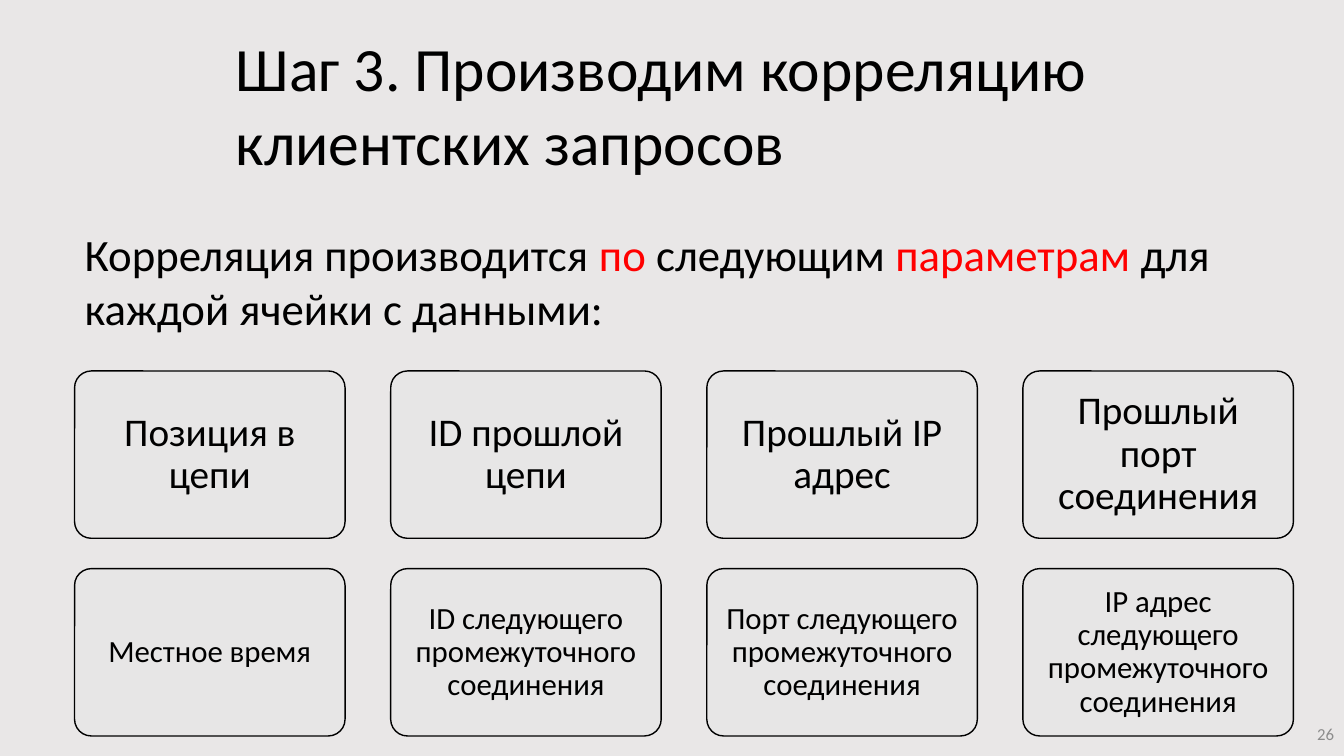
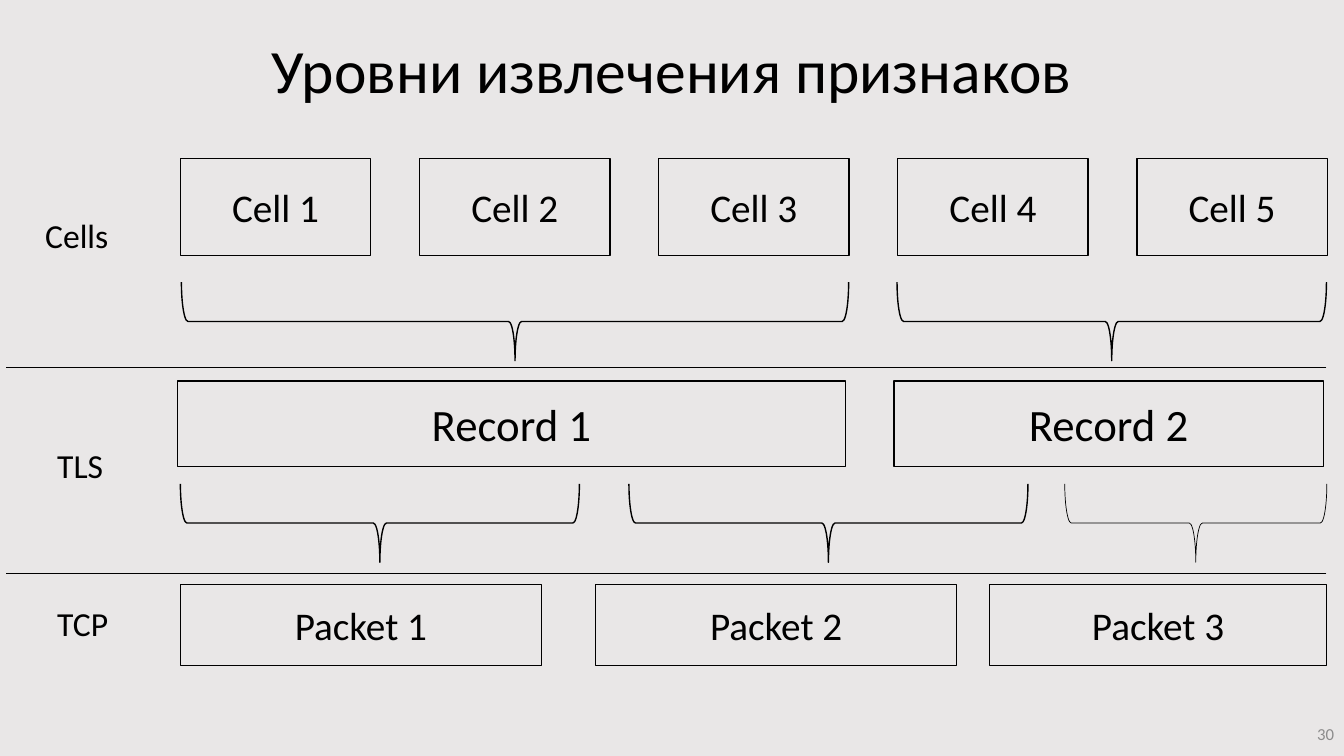
from pptx import Presentation
from pptx import util as u
from pptx.dml import color
from pptx.enum import shapes, text
from pptx.oxml import xmlchemy

Pt = u.Pt
Kind = shapes.MSO_SHAPE
Align = text.PP_ALIGN
Anchor = text.MSO_ANCHOR


def rgb(value):
    return color.RGBColor.from_string(value)


def write(shape, content, size=28, ink="000000", align=Align.LEFT,
          anchor=Anchor.TOP, spacing=1.0, inset=None):
    """Fill a shape with a string, or with (text, colour) pairs."""
    frame = shape.text_frame
    frame.word_wrap = True
    frame.vertical_anchor = anchor
    if inset is not None:
        frame.margin_left = frame.margin_right = Pt(inset)
        frame.margin_top = frame.margin_bottom = Pt(inset)
    paragraph = frame.paragraphs[0]
    paragraph.alignment = align
    paragraph.line_spacing = spacing
    for part, part_ink in [(content, ink)] if isinstance(content, str) else content:
        run = paragraph.add_run()
        run.text = part
        run.font.name = Deck.FONT
        run.font.size = Pt(size)
        run.font.color.rgb = rgb(part_ink)


class Deck:
    FONT = "Calibri"
    BACKGROUND = "E9E7E7"
    BOX_FILL = "E7E6E6"
    INK = "000000"
    ACCENT = "FF0000"
    MUTED = "8C8C8C"

    def __init__(self):
        self.presentation = Presentation()
        self.presentation.slide_width = Pt(960)
        self.presentation.slide_height = Pt(540)
        background = self.presentation.slide_master.background.fill
        background.solid()
        background.fore_color.rgb = rgb(self.BACKGROUND)
        self.slide = None

    def new_slide(self, number):
        layout = self.presentation.slide_layouts[6]
        self.slide = self.presentation.slides.add_slide(layout)
        self.text(number, 744, 510, 216, 28.8, size=12, ink=self.MUTED,
                  align=Align.RIGHT, anchor=Anchor.MIDDLE)

    def text(self, content, left, top, width, height, **style):
        shape = self.slide.shapes.add_textbox(
            Pt(left), Pt(top), Pt(width), Pt(height))
        write(shape, content, **style)

    def title(self, content, left, top, width, height, **style):
        self.text(content, left, top, width, height, size=44,
                  anchor=Anchor.MIDDLE, **style)

    def outline(self, kind, left, top, width, height, fill=None, weight=1):
        shape = self.slide.shapes.add_shape(
            kind, Pt(left), Pt(top), Pt(width), Pt(height))
        shape.shadow.inherit = False
        if fill:
            shape.fill.solid()
            shape.fill.fore_color.rgb = rgb(fill)
        else:
            shape.fill.background()
        shape.line.color.rgb = rgb(self.INK)
        shape.line.width = Pt(weight)
        return shape

    def box(self, content, left, top, width, height, **style):
        shape = self.outline(Kind.RECTANGLE, left, top, width, height)
        write(shape, content, align=Align.CENTER, anchor=Anchor.MIDDLE, **style)

    def card(self, content, left, top, width, height, **style):
        shape = self.outline(Kind.ROUNDED_RECTANGLE, left, top, width, height,
                             fill=self.BOX_FILL)
        shape.adjustments[0] = 0.1
        write(shape, content, align=Align.CENTER, anchor=Anchor.MIDDLE,
              spacing=0.9, **style)

    def brace_below(self, left, top, width, height=56, weight=1):
        """Draw a brace that points down, placed by its visible bounds."""
        shift = (width - height) / 2
        shape = self.outline(Kind.LEFT_BRACE, left + shift, top - shift,
                             height, width, weight=weight)
        shape.rotation = 270

    def divider(self, top, left=4.3, right=947.5):
        line = self.slide.shapes.add_connector(
            shapes.MSO_CONNECTOR.STRAIGHT, Pt(right), Pt(top), Pt(left), Pt(top))
        line.line.color.rgb = rgb(self.INK)
        line.line.width = Pt(0.5)
        properties = line._element.spPr
        properties.append(properties.makeelement(
            xmlchemy.qn("a:effectLst"), {}))


def correlation_slide(deck):
    deck.new_slide("26")
    deck.title("Шаг 3. Производим корреляцию клиентских запросов",
               161.3, 17.3, 762.5, 113.8)
    deck.text([("Корреляция производится ", deck.INK), ("по", deck.ACCENT),
               (" следующим ", deck.INK), ("параметрам ", deck.ACCENT),
               ("для каждой ячейки с данными:", deck.INK)],
              53.3, 158.4, 866, 85, size=32)
    rows = [
        (28, 8.6, ["Позиция в цепи", "ID прошлой цепи", "Прошлый IP адрес",
                   "Прошлый порт соединения"]),
        (22, 6.5, ["Местное время",
                   "ID следующего промежуточного соединения",
                   "Порт следующего промежуточного соединения",
                   "IP адрес следующего промежуточного соединения"]),
    ]
    for row, (size, inset, labels) in enumerate(rows):
        for column, label in enumerate(labels):
            deck.card(label, 53.3 + column * 225.8, 265 + row * 141.2,
                      193.2, 119.5, size=size, inset=inset)


def levels_slide(deck):
    deck.new_slide("30")
    deck.title("Уровни извлечения признаков", 66, 0, 828, 104.4,
               align=Align.CENTER, spacing=0.9)
    for label, left, top in [("Cells", 25.2, 149.8), ("TLS", 33.8, 314.6),
                             ("TCP", 33.8, 427)]:
        deck.text(label, left, top, 80, 36, size=24)

    for index in range(5):
        deck.box(f"Cell {index + 1}", 128.9 + index * 170.8, 113.4, 136, 69)
    for index, (left, width) in enumerate([(126.7, 477.4), (638.6, 306.7)], 1):
        deck.box(f"Record {index}", left, 272.2, width, 61.2, size=32)
    packets = [(128.9, 257.8), (425.5, 257.8), (707, 240.5)]
    for index, (left, width) in enumerate(packets, 1):
        deck.box(f"Packet {index}", left, 417.6, width, 57.6)

    for left, width in [(129.6, 476.6), (640.8, 306.7)]:
        deck.brace_below(left, 201.6, width)
    for left, width, weight in [(128.9, 285, 1), (449.3, 285, 1),
                                (760.6, 187.2, 0.5)]:
        deck.brace_below(left, 345.6, width, weight=weight)
    for top in (262.1, 409.7):
        deck.divider(top)


def main():
    deck = Deck()
    correlation_slide(deck)
    levels_slide(deck)
    deck.presentation.save("out.pptx")


if __name__ == "__main__":
    main()
